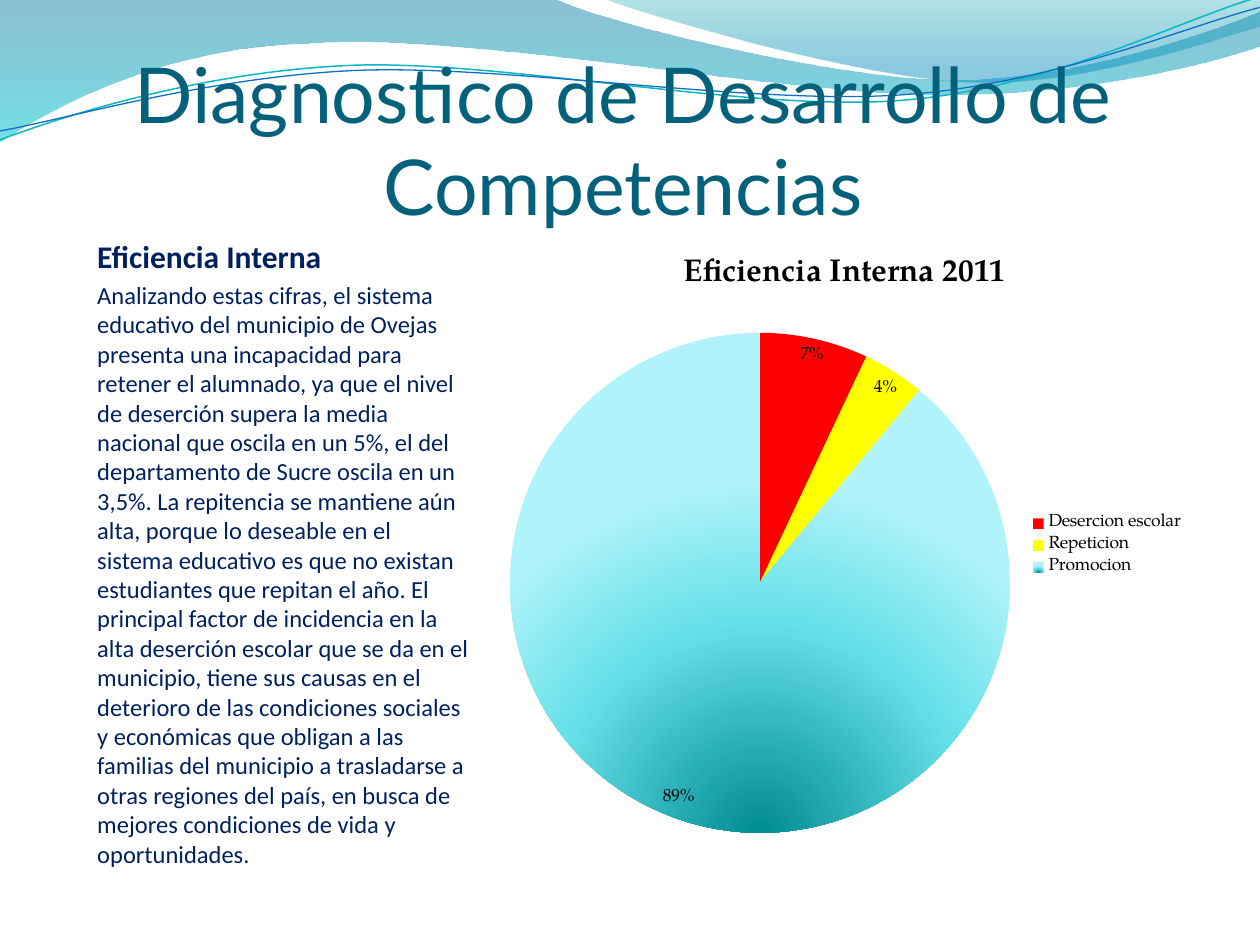
from dataclasses import dataclass
from typing import Optional

from lxml.etree import SubElement
from pptx import Presentation
from pptx.chart.data import CategoryChartData
from pptx.dml.color import RGBColor
from pptx.enum.chart import XL_CHART_TYPE as ChartType
from pptx.enum.chart import XL_LABEL_POSITION as LabelPosition
from pptx.enum.chart import XL_LEGEND_POSITION as LegendPosition
from pptx.enum.text import MSO_ANCHOR as Anchor
from pptx.enum.text import MSO_AUTO_SIZE as AutoSize
from pptx.enum.text import PP_ALIGN as Align
from pptx.oxml import parse_xml
from pptx.oxml.ns import nsdecls, qn
from pptx.util import Cm, Pt

COLORS = {
    "title": "04617B", "body": "002060", "chart_text": "000000",
    "dropout": "FF0000", "repeat": "FFFF00",
    "wave_blue": "0074A1", "wave_cyan": "00C6CF",
    "crest_teal": "00A1A9", "crest_blue": "008BBF",
    "line_teal": "0AB8BF", "line_blue": "0F6FC6",
    "pie_dark": "008B93", "pie_middle": "65E0E8", "pie_light": "B0F3FA",
}
# Left, top, width and height in cm
CHART_BOX = (9.93, 4.65, 14.2, 12.7)
PIE_BOX = (10.28, 6.71, 10.08, 10.08)


@dataclass
class Stop:
    position: float
    color: str
    opacity: int


@dataclass
class Wave:
    """Outline in cm: a pair is a straight step, six numbers are a Bézier curve."""
    start: tuple
    segments: list
    stops: Optional[list] = None
    line: Optional[str] = None
    width: float = 0


@dataclass
class Paragraph:
    text: str
    size: int
    bold: bool


WAVES = [
    Wave((0, 0), [(11.18, -0.03), (12.09, 0.43, 16.87, 1.6, 19.25, 1.6),
                  (21.67, 1.6, 24.33, 0.66, 25.4, 0.23), (25.43, 0.91),
                  (24.97, 1.12, 22.1, 1.93, 18.95, 1.91),
                  (15.8, 1.91, 9.7, 0.71, 6.53, 0.86),
                  (3.28, 0.91, 1.17, 2.11, -0.03, 2.87), (0, 0)],
         stops=[Stop(0, "wave_blue", 45), Stop(1, "wave_cyan", 55)]),
    Wave((12.17, -0.03), [(12.93, 0.28, 17.32, 1.57, 19.53, 1.65),
                          (21.74, 1.75, 24.41, 0.81, 25.4, 0.53), (25.4, 0),
                          (12.17, -0.03)],
         stops=[Stop(0, "crest_teal", 30), Stop(0.8, "crest_blue", 45)]),
    Wave((0, 2.82), [(1.22, 2.36, 4.01, 1.45, 7.04, 1.32),
                     (10.03, 1.19, 15.06, 2.26, 18.11, 2.03),
                     (21.16, 1.8, 23.83, 0.38, 25.35, -0.05)],
         line="line_teal", width=0.85),
    Wave((0, 2.64), [(1.19, 2.44, 4.17, 1.55, 7.19, 1.42),
                     (10.24, 1.3, 15.16, 2.13, 18.21, 1.91),
                     (21.23, 1.7, 23.9, 0.53, 25.4, 0.15)],
         line="line_blue", width=0.75),
]

BODY = [
    Paragraph("Eficiencia Interna", 18, True),
    Paragraph(
        "Analizando estas cifras, el sistema educativo del municipio de Ovejas "
        "presenta una incapacidad para retener el alumnado, ya que el nivel de "
        "deserción supera la media nacional que oscila en un 5%, el del "
        "departamento de Sucre oscila en un 3,5%. La repitencia se mantiene aún "
        "alta, porque lo deseable en el sistema educativo es que no existan "
        "estudiantes que repitan el año. El principal factor de incidencia en la "
        "alta deserción escolar que se da en el municipio, tiene sus causas en el "
        "deterioro de las condiciones sociales y económicas que obligan a las "
        "familias del municipio a trasladarse a otras regiones del país, en busca "
        "de mejores condiciones de vida y oportunidades.", 14, False),
]


def rgb(name: str) -> RGBColor:
    return RGBColor.from_string(COLORS[name])


def bend(shape, segments: list) -> None:
    """Turn the straight steps that stand for curves into Bézier curves."""
    steps = list(shape.element.iter(qn("a:lnTo")))
    for step, segment in zip(steps, segments):
        if len(segment) == 6:
            points = "".join(
                f'<a:pt x="{Cm(x) - shape.left}" y="{Cm(y) - shape.top}"/>'
                for x, y in zip(segment[::2], segment[1::2]))
            curve = parse_xml(f'<a:cubicBezTo {nsdecls("a")}>{points}</a:cubicBezTo>')
            step.getparent().replace(step, curve)


def draw_wave(slide, wave: Wave) -> None:
    builder = slide.shapes.build_freeform(*(Cm(value) for value in wave.start))
    ends = [(Cm(segment[-2]), Cm(segment[-1])) for segment in wave.segments]
    builder.add_line_segments(ends, close=wave.stops is not None)
    shape = builder.convert_to_shape()
    bend(shape, wave.segments)
    shape.shadow.inherit = False
    if wave.stops:
        shape.line.fill.background()
        shape.fill.gradient()
        shape.fill.gradient_angle = 270
        for gradient_stop, stop in zip(shape.fill.gradient_stops, wave.stops):
            gradient_stop.position = stop.position
            gradient_stop.color.rgb = rgb(stop.color)
        colors = list(shape.element.spPr.iter(qn("a:srgbClr")))
        for color, stop in zip(colors, wave.stops):
            SubElement(color, qn("a:alpha")).set("val", str(stop.opacity * 1000))
    else:
        shape.fill.background()
        shape.line.color.rgb = rgb(wave.line)
        shape.line.width = Pt(wave.width)
    # Waves lie behind the text
    slide.shapes.title.element.addprevious(shape.element)


def place(shape, left: float, top: float, width: float, height: float) -> None:
    shape.left, shape.top = Cm(left), Cm(top)
    shape.width, shape.height = Cm(width), Cm(height)


def set_frame(text_frame, side: float, bottom: float, top: float, anchor) -> None:
    text_frame.word_wrap = True
    text_frame.auto_size = AutoSize.NONE
    text_frame.vertical_anchor = anchor
    text_frame.margin_left = text_frame.margin_right = Cm(side)
    text_frame.margin_top, text_frame.margin_bottom = Cm(top), Cm(bottom)


def format_runs(paragraph, font_name: str, size: int, color: str, bold: bool) -> None:
    for run in paragraph.runs:
        run.font.name, run.font.size, run.font.bold = font_name, Pt(size), bold
        run.font.color.rgb = rgb(color)


def write_title(title) -> None:
    place(title, 1.91, 1.43, 21.31, 3.23)
    title.text_frame.text = "Diagnostico de Desarrollo de Competencias"
    set_frame(title.text_frame, 0, 0, 0.13, Anchor.BOTTOM)
    paragraph = title.text_frame.paragraphs[0]
    paragraph.alignment = Align.CENTER
    format_runs(paragraph, "Lato", 44, "title", False)


def write_body(body) -> None:
    place(body, 1.91, 4.65, 7.62, 12.7)
    text_frame = body.text_frame
    set_frame(text_frame, 0.05, 0.13, 0.13, Anchor.TOP)
    text_frame.text = "\n".join(item.text for item in BODY)
    for paragraph, item in zip(text_frame.paragraphs, BODY):
        paragraph.alignment = Align.LEFT
        format_runs(paragraph, "Calibri", item.size, "body", item.bold)
        properties = paragraph._p.get_or_add_pPr()
        properties.set("marL", "0")
        properties.set("indent", "0")
        SubElement(properties, qn("a:buNone"))


def radial_fill(point) -> None:
    """Fill a slice with rings that spread from its bottom centre."""
    rings = ((0, "pie_dark"), (60, "pie_middle"), (100, "pie_light"))
    stops = "".join(f'<a:gs pos="{percent * 1000}"><a:srgbClr val="{COLORS[name]}"/></a:gs>'
                    for percent, name in rings)
    point.format.fill.background()
    properties = point.format.fill._xPr
    gradient = parse_xml(
        f'<a:gradFill {nsdecls("a")} rotWithShape="1"><a:gsLst>{stops}</a:gsLst>'
        '<a:path path="circle"><a:fillToRect l="50000" t="100000" r="50000" b="0"/>'
        '</a:path></a:gradFill>')
    properties.replace(properties.find(qn("a:noFill")), gradient)


def place_pie(chart) -> None:
    """Fix the plot area as fractions of the chart."""
    left, top, width, height = CHART_BOX
    pie_left, pie_top, pie_width, pie_height = PIE_BOX
    settings = {"layoutTarget": "inner", "xMode": "edge", "yMode": "edge",
                "x": (pie_left - left) / width, "y": (pie_top - top) / height,
                "w": pie_width / width, "h": pie_height / height}
    edges = "".join(f'<c:{tag} val="{value}"/>' for tag, value in settings.items())
    area = chart.element.find(".//" + qn("c:plotArea"))
    for old_layout in area.findall(qn("c:layout")):
        area.remove(old_layout)
    area.insert(0, parse_xml(f'<c:layout {nsdecls("c")}><c:manualLayout>{edges}'
                             '</c:manualLayout></c:layout>'))


def draw_pie(slide) -> None:
    data = CategoryChartData()
    data.categories = ["Desercion escolar", "Repeticion", "Promocion"]
    data.add_series("Series 1", (7, 4, 89))
    box = (Cm(length) for length in CHART_BOX)
    chart = slide.shapes.add_chart(ChartType.PIE, *box, data).chart
    chart.font.name, chart.font.size = "TeX Gyre Pagella", Pt(10)
    chart.font.color.rgb = rgb("chart_text")
    chart.has_title = True
    title_frame = chart.chart_title.text_frame
    title_frame.text = "Eficiencia Interna 2011"
    format_runs(title_frame.paragraphs[0], "TeX Gyre Pagella", 18, "chart_text", True)
    chart.has_legend = True
    chart.legend.position = LegendPosition.RIGHT
    chart.legend.include_in_layout = False
    place_pie(chart)

    # Slices and percentages
    plot = chart.plots[0]
    plot.vary_by_categories = True
    points = plot.series[0].points
    for index, name in enumerate(("dropout", "repeat")):
        points[index].format.fill.solid()
        points[index].format.fill.fore_color.rgb = rgb(name)
    radial_fill(points[2])
    labels = plot.series[0].data_labels
    labels.show_percentage, labels.show_value = True, False
    labels.number_format, labels.number_format_is_linked = "0%", False
    labels.position = LabelPosition.BEST_FIT


def main() -> None:
    presentation = Presentation()
    presentation.slide_width, presentation.slide_height = Cm(25.4), Cm(19.05)
    slide = presentation.slides.add_slide(presentation.slide_layouts[1])
    for wave in WAVES:
        draw_wave(slide, wave)
    write_title(slide.shapes.title)
    write_body(slide.placeholders[1])
    draw_pie(slide)
    presentation.save("out.pptx")


if __name__ == "__main__":
    main()
